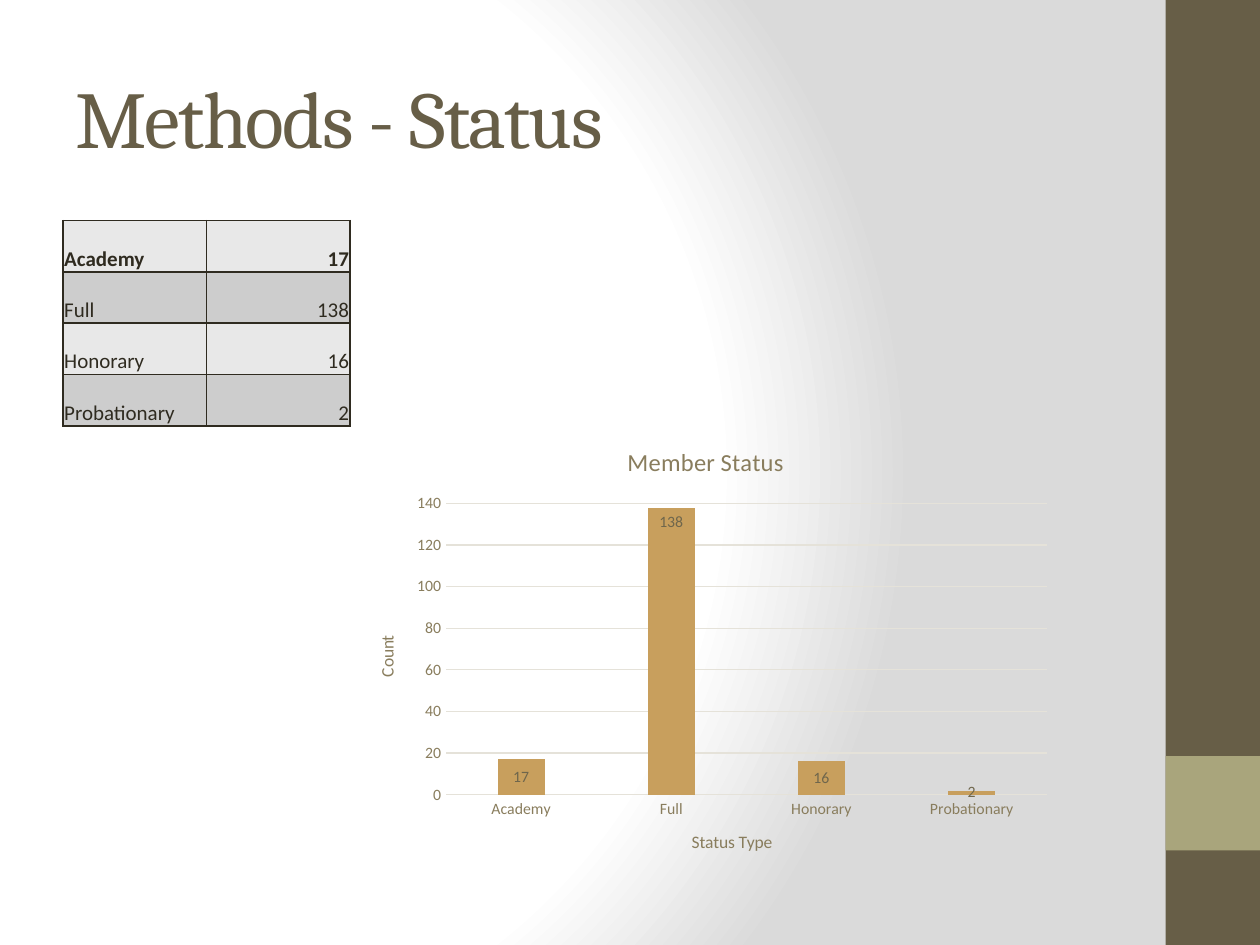
from dataclasses import dataclass

from pptx import Presentation
from pptx.chart.data import CategoryChartData
from pptx.dml.color import RGBColor
from pptx.enum.chart import XL_CHART_TYPE, XL_LABEL_POSITION, XL_TICK_MARK
from pptx.enum.shapes import MSO_SHAPE
from pptx.enum.text import MSO_ANCHOR, PP_ALIGN
from pptx.oxml import parse_xml
from pptx.oxml.ns import nsdecls, qn
from pptx.util import Inches, Pt

RECT = MSO_SHAPE.RECTANGLE
MIDDLE, BOTTOM = MSO_ANCHOR.MIDDLE, MSO_ANCHOR.BOTTOM
LEFT, RIGHT = PP_ALIGN.LEFT, PP_ALIGN.RIGHT
COLUMNS = XL_CHART_TYPE.COLUMN_CLUSTERED
CENTER, INSIDE_END = XL_LABEL_POSITION.CENTER, XL_LABEL_POSITION.INSIDE_END
NO_TICK = XL_TICK_MARK.NONE

STATUSES = [("Academy", 17), ("Full", 138), ("Honorary", 16), ("Probationary", 2)]


@dataclass(frozen=True)
class Theme:
    heading_font: str = "Cambria"
    body_font: str = "Calibri"
    brown: str = "675E47"
    olive: str = "A9A57C"
    ink: str = "2F2B20"
    bands: tuple = ("E8E8E8", "CDCDCD")
    bar: str = "C89F5D"
    chart_text: str = "897D5D"
    label_text: str = "6F664C"
    grid: str = "E5E2D9"
    bg_stops: tuple = ((0, "FFFFFF"), (75, "FFFFFF"), (100, "DADADA"))
    title_size: int = 46
    table_size: int = 12
    chart_title_size: int = 14
    axis_title_size: int = 10
    axis_size: int = 9


class SlideBuilder:
    def __init__(self, slide, theme):
        self.s = slide
        self.theme = theme

    def style(self, font, size, color, name=None, bold=False):
        font.name = name or self.theme.body_font
        font.size = Pt(size)
        font.bold = bold
        font.color.rgb = RGBColor.from_string(color)

    def background(self):
        """Fill the background with a circular gradient centred left of the middle."""
        self.s.background.fill.solid()
        bg = self.s.element.find(".//" + qn("p:bgPr"))
        stops = "".join(
            f'<a:gs pos="{pos * 1000}"><a:srgbClr val="{color}"/></a:gs>'
            for pos, color in self.theme.bg_stops)
        bg.replace(bg[0], parse_xml(
            f'<a:gradFill {nsdecls("a")} rotWithShape="1"><a:gsLst>{stops}</a:gsLst>'
            '<a:path path="circle"><a:fillToRect l="20000" t="50000" r="100000" b="50000"/>'
            '</a:path></a:gradFill>'))

    def block(self, x, y, w, h, color):
        sp = self.s.shapes.add_shape(RECT, Inches(x), Inches(y), Inches(w), Inches(h))
        sp.shadow.inherit = False
        sp.fill.solid()
        sp.fill.fore_color.rgb = RGBColor.from_string(color)
        sp.line.fill.background()

    def title(self, x, y, w, h, text):
        sp = self.s.shapes.add_textbox(Inches(x), Inches(y), Inches(w), Inches(h))
        tf = sp.text_frame
        tf.word_wrap = True
        tf.vertical_anchor = MIDDLE
        r = tf.paragraphs[0].add_run()
        r.text = text
        self.style(r.font, self.theme.title_size, self.theme.brown,
                   self.theme.heading_font)
        r.font._element.set("spc", "-100")

    def table(self, x, y, w, h, rows):
        frame = self.s.shapes.add_table(len(rows), len(rows[0]), Inches(x), Inches(y),
                                        Inches(w), Inches(h))
        for i, row in enumerate(rows):
            for j, value in enumerate(row):
                self.cell(frame.table.cell(i, j), str(value), self.theme.bands[i % 2],
                          RIGHT if j else LEFT, bold=i == 0)

    def cell(self, cell, text, fill, align, bold):
        cell.margin_left = cell.margin_right = cell.margin_top = Inches(0.01)
        cell.margin_bottom = 0
        cell.vertical_anchor = BOTTOM
        cell.fill.solid()
        cell.fill.fore_color.rgb = RGBColor.from_string(fill)
        p = cell.text_frame.paragraphs[0]
        p.alignment = align
        r = p.add_run()
        r.text = text
        self.style(r.font, self.theme.table_size, self.theme.ink, bold=bold)
        props = cell._tc.get_or_add_tcPr()
        for i, side in enumerate("LRTB"):
            props.insert(i, parse_xml(
                f'<a:ln{side} {nsdecls("a")} w="{Pt(1)}"><a:solidFill>'
                f'<a:srgbClr val="{self.theme.ink}"/></a:solidFill></a:ln{side}>'))

    def column_chart(self, x, y, w, h, title, x_title, y_title, rows):
        data = CategoryChartData()
        data.categories = [name for name, _ in rows]
        counts = [count for _, count in rows]
        data.add_series("Series 1", counts)
        chart = self.s.shapes.add_chart(COLUMNS, Inches(x), Inches(y), Inches(w),
                                        Inches(h), data).chart
        t = self.theme
        self.style(chart.font, t.axis_title_size, t.ink)
        chart.has_legend = False
        self.chart_title(chart.chart_title, title, t.chart_title_size)

        for axis, text in ((chart.category_axis, x_title), (chart.value_axis, y_title)):
            self.chart_title(axis.axis_title, text, t.axis_title_size)
            self.style(axis.tick_labels.font, t.axis_size, t.chart_text)
            axis.major_tick_mark = axis.minor_tick_mark = NO_TICK
        self.hairline(chart.category_axis.format.line)
        values = chart.value_axis
        values.minimum_scale, values.maximum_scale, values.major_unit = 0, 140, 20
        values.format.line.fill.background()
        self.hairline(values.major_gridlines.format.line)

        plot = chart.plots[0]
        plot.vary_by_categories = False
        plot.gap_width, plot.overlap = 219, -27
        series = plot.series[0]
        series.format.fill.solid()
        series.format.fill.fore_color.rgb = RGBColor.from_string(t.bar)
        labels = series.data_labels
        labels.show_value = True
        labels.position = CENTER
        self.style(labels.font, t.axis_size, t.label_text)
        tallest = series.points[counts.index(max(counts))].data_label
        self.style(tallest.font, t.axis_size, t.label_text)
        tallest.position = INSIDE_END

    def chart_title(self, title, text, size):
        r = title.text_frame.paragraphs[0].add_run()
        r.text = text
        self.style(r.font, size, self.theme.chart_text)

    def hairline(self, line):
        line.width = Pt(0.75)
        line.color.rgb = RGBColor.from_string(self.theme.grid)


def main():
    prs = Presentation()
    prs.slide_width, prs.slide_height = Inches(10), Inches(7.5)
    theme = Theme()
    slide = SlideBuilder(prs.slides.add_slide(prs.slide_layouts[6]), theme)
    slide.background()
    slide.block(9.25, 0, 0.75, 7.5, theme.brown)
    slide.block(9.25, 6, 0.75, 0.75, theme.olive)
    slide.title(0.5, 0.3, 8.33, 1.25, "Methods - Status")
    slide.table(0.5, 1.75, 2.28, 1.63, STATUSES)
    slide.column_chart(2.78, 3.37, 5.64, 3.6, "Member Status", "Status Type", "Count",
                       STATUSES)
    prs.save("out.pptx")


if __name__ == "__main__":
    main()
